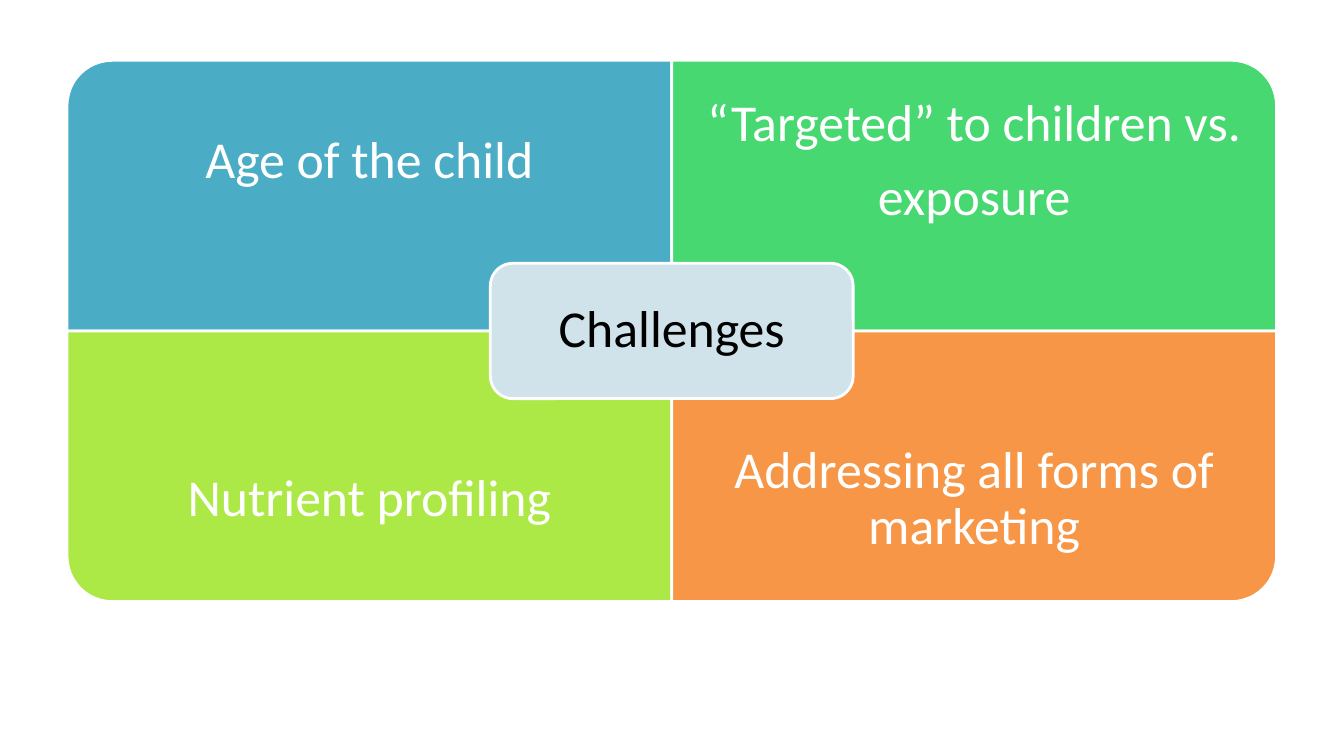
from dataclasses import dataclass

from pptx import Presentation
from pptx.dml.color import RGBColor
from pptx.enum.shapes import MSO_SHAPE
from pptx.enum.text import MSO_ANCHOR, PP_ALIGN
from pptx.shapes.autoshape import Shape
from pptx.shapes.shapetree import SlideShapes
from pptx.util import Cm, Pt

WHITE = RGBColor(0xFF, 0xFF, 0xFF)
BLACK = RGBColor(0x00, 0x00, 0x00)
BLUE = RGBColor(0x4B, 0xAC, 0xC6)
GREEN = RGBColor(0x47, 0xD8, 0x72)
LIME = RGBColor(0xAC, 0xE9, 0x46)
ORANGE = RGBColor(0xF7, 0x96, 0x46)
PALE = RGBColor(0xD0, 0xE3, 0xEA)

LEFT, TOP = 1.69, 1.52
QUAD_W, QUAD_H = 15.24, 6.82
MID_X, MID_Y = LEFT + QUAD_W, TOP + QUAD_H
TEXT_H = QUAD_H * 0.75
HUB_W, HUB_H = QUAD_W * 0.6, QUAD_H * 0.5


@dataclass
class Quadrant:
    col: int
    row: int
    rotation: int
    color: RGBColor
    lines: tuple[str, ...]


QUADRANTS = [
    Quadrant(0, 0, 270, BLUE, ("Age of the child",)),
    Quadrant(1, 0, 0, GREEN, ("“Targeted” to children vs.", "exposure")),
    Quadrant(0, 1, 180, LIME, ("Nutrient profiling",)),
    Quadrant(1, 1, 90, ORANGE, ("Addressing all forms of marketing",)),
]


def add_panel(shapes: SlideShapes, kind: MSO_SHAPE, cx: float, cy: float,
              w: float, h: float, color: RGBColor) -> Shape:
    s = shapes.add_shape(kind, Cm(cx - w / 2), Cm(cy - h / 2), Cm(w), Cm(h))
    s.shadow.inherit = False
    s.fill.solid()
    s.fill.fore_color.rgb = color
    s.line.color.rgb = WHITE
    s.line.width = Pt(2)
    return s


def write(s: Shape, lines: tuple[str, ...], color: RGBColor, inset: float) -> None:
    tf = s.text_frame
    tf.word_wrap = True
    tf.vertical_anchor = MSO_ANCHOR.MIDDLE
    tf.margin_left = tf.margin_right = tf.margin_top = tf.margin_bottom = Cm(inset)
    tf.text = "\n".join(lines)
    for p in tf.paragraphs:
        p.alignment = PP_ALIGN.CENTER
        p.line_spacing = 0.9
        p.space_after = Pt(13)
        p.font.name = "Calibri"
        p.font.size = Pt(37)
        p.font.color.rgb = color


def add_quadrant(shapes: SlideShapes, q: Quadrant) -> None:
    x, y = LEFT + q.col * QUAD_W, TOP + q.row * QUAD_H
    w, h = (QUAD_H, QUAD_W) if q.rotation % 180 else (QUAD_W, QUAD_H)
    s = add_panel(shapes, MSO_SHAPE.ROUND_1_RECTANGLE,
                  x + QUAD_W / 2, y + QUAD_H / 2, w, h, q.color)
    s.rotation = q.rotation
    text_y = y + q.row * (QUAD_H - TEXT_H)
    box = shapes.add_textbox(Cm(x), Cm(text_y), Cm(QUAD_W), Cm(TEXT_H))
    write(box, q.lines, WHITE, 0.73)


def main() -> None:
    prs = Presentation()
    prs.slide_width, prs.slide_height = Cm(33.87), Cm(19.05)
    shapes = prs.slides.add_slide(prs.slide_layouts[6]).shapes
    for q in QUADRANTS:
        add_quadrant(shapes, q)
    hub = add_panel(shapes, MSO_SHAPE.ROUNDED_RECTANGLE,
                    MID_X, MID_Y, HUB_W, HUB_H, PALE)
    write(hub, ("Challenges",), BLACK, 0.38)
    prs.save("out.pptx")


if __name__ == "__main__":
    main()
